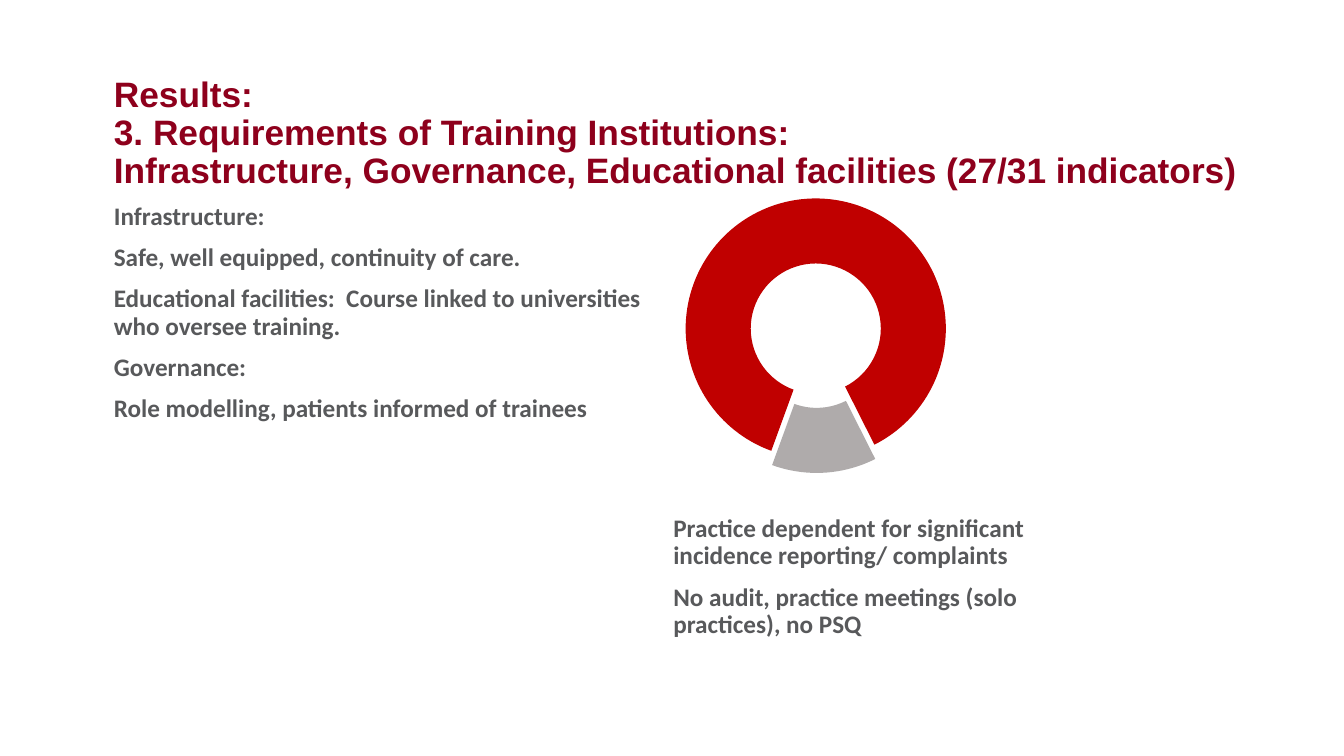
from lxml.etree import SubElement
from pptx import Presentation
from pptx.chart.data import CategoryChartData
from pptx.dml.color import RGBColor
from pptx.enum.chart import XL_CHART_TYPE
from pptx.oxml.ns import qn
from pptx.util import Cm, Pt

CRIMSON = RGBColor(0x8E, 0x00, 0x1C)
SLATE = RGBColor(0x58, 0x59, 0x5B)
RED = RGBColor(0xC0, 0x00, 0x00)
GREY = RGBColor(0xAF, 0xAB, 0xAB)
BLACK = RGBColor(0x00, 0x00, 0x00)

# Content: each text is a list of paragraphs, each paragraph a list of lines
TITLE = [[
    "Results: ",
    "3. Requirements of Training Institutions:",
    "Infrastructure, Governance, Educational facilities (27/31 indicators)",
]]
FINDINGS = [
    ["Infrastructure:"],
    ["Safe, well equipped, continuity of care."],
    ["Educational facilities:  Course linked to universities who oversee training."],
    ["Governance:"],
    ["Role modelling, patients informed of trainees"],
]
GAPS = [
    ["Practice dependent for significant incidence reporting/ complaints"],
    ["No audit, practice meetings (solo practices), no PSQ"],
]
SHARES = [("1", 87, RED), ("2", 13, GREY)]

# Left, top, width, height in centimetres
TITLE_BOX = (2.87, 1.93, 29.21, 2.87)
FINDINGS_BOX = (2.87, 5.13, 13.4, 12.09)
GAPS_BOX = (16.97, 13, 9.02, 5)
CHART_BOX = (14.22, 4.65, 12.7, 7.62)

FIRST_SLICE_ANGLE = 200
HOLE_SIZE = 50
EXPLOSION = 11


def add_text(slide, box, paragraphs, font_name, size, color):
    shape = slide.shapes.add_textbox(*map(Cm, box))
    frame = shape.text_frame
    frame.word_wrap = True
    frame.margin_left = frame.margin_right = 0
    frame.margin_top = frame.margin_bottom = 0
    for index, lines in enumerate(paragraphs):
        paragraph = frame.add_paragraph() if index else frame.paragraphs[0]
        paragraph.line_spacing = 0.9
        paragraph.space_before = Pt(10 if index else 0)
        for number, line in enumerate(lines):
            if number:
                paragraph.add_line_break()
            run = paragraph.add_run()
            run.text = line
            run.font.name = font_name
            run.font.size = Pt(size)
            run.font.bold = True
            run.font.color.rgb = color


def add_doughnut(slide):
    data = CategoryChartData()
    data.categories = [name for name, _, _ in SHARES]
    data.add_series("Series 1", [value for _, value, _ in SHARES])
    chart = slide.shapes.add_chart(
        XL_CHART_TYPE.DOUGHNUT, *map(Cm, CHART_BOX), data
    ).chart
    chart.has_title = False
    chart.has_legend = False
    chart.font.name = "Calibri"
    chart.font.size = Pt(10)
    chart.font.color.rgb = BLACK
    plot = chart.plots[0]
    plot.vary_by_categories = True
    series = plot.series[0]
    for index, (_, _, color) in enumerate(SHARES):
        point_format = series.points[index].format
        point_format.fill.solid()
        point_format.fill.fore_color.rgb = color
        point_format.line.fill.background()

    # Slice separation, rotation and hole are set in the chart XML
    series_element = series._element
    explosion = SubElement(series_element, qn("c:explosion"), val=str(EXPLOSION))
    series_element.find(qn("c:dPt")).addprevious(explosion)
    doughnut = plot._element
    for tag, value in (("c:firstSliceAng", FIRST_SLICE_ANGLE), ("c:holeSize", HOLE_SIZE)):
        doughnut.find(qn(tag)).set("val", str(value))


def main():
    presentation = Presentation()
    presentation.slide_width = Cm(33.87)
    presentation.slide_height = Cm(19.05)
    slide = presentation.slides.add_slide(presentation.slide_layouts[6])

    # Text blocks
    add_text(slide, TITLE_BOX, TITLE, "Arial", 25.2, CRIMSON)
    add_text(slide, FINDINGS_BOX, FINDINGS, "Calibri", 18, SLATE)
    add_text(slide, GAPS_BOX, GAPS, "Calibri", 18, SLATE)

    # Share of indicators met
    add_doughnut(slide)
    presentation.save("out.pptx")


if __name__ == "__main__":
    main()
